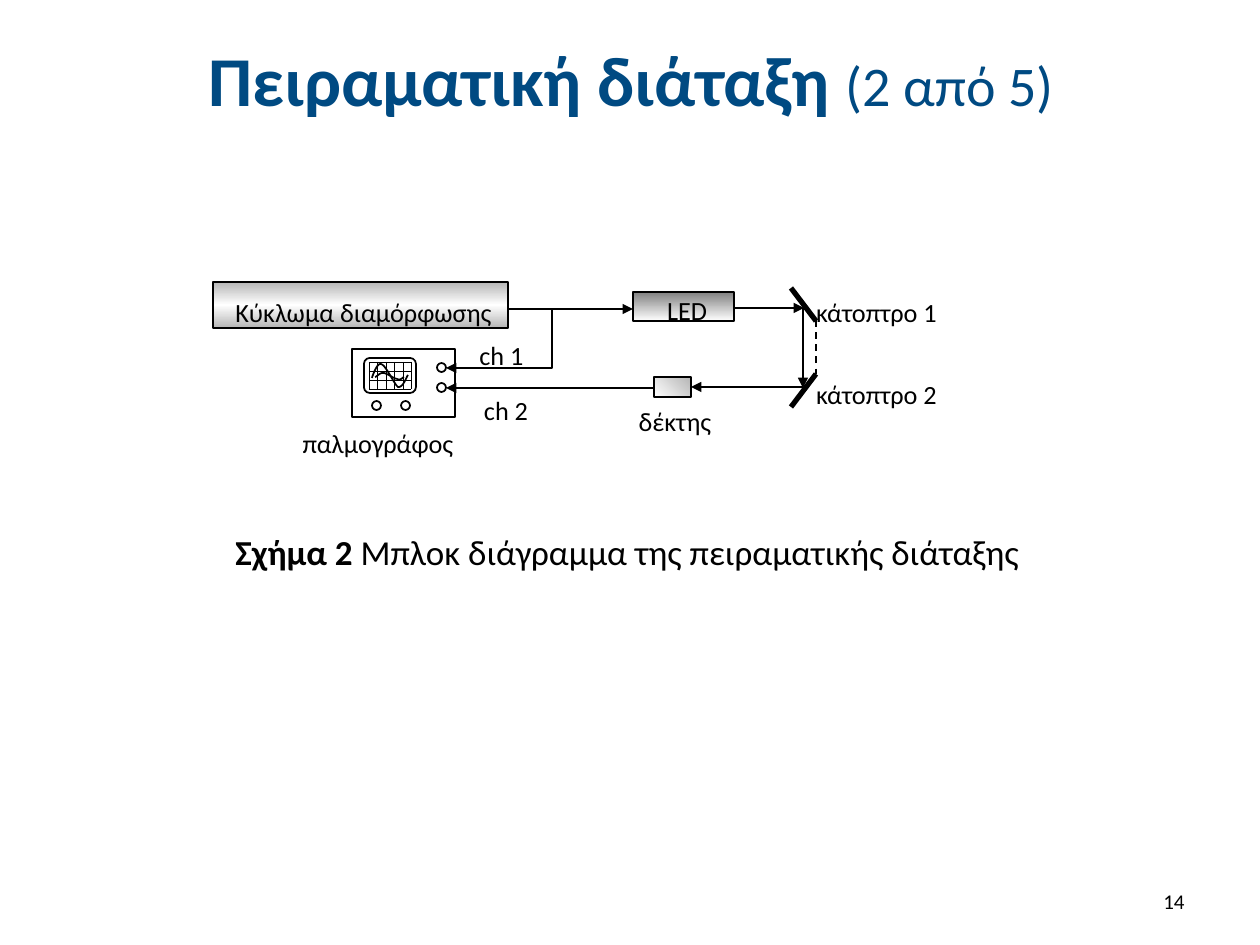
from dataclasses import dataclass

from lxml import etree
from pptx import Presentation
from pptx import util as u
from pptx.dml.color import RGBColor
from pptx.enum import dml, shapes, text
from pptx.oxml.ns import qn

PX = 914400 / 126
BLACK = "000000"
NAVY = "004A82"
SHAPE = shapes.MSO_SHAPE
ALIGN = text.PP_ALIGN
MIDDLE = text.MSO_ANCHOR.MIDDLE


@dataclass
class Run:
    text: str
    size: int = 15
    bold: bool = False
    color: str = BLACK
    font: str = "Calibri"


@dataclass
class Box:
    """A preset shape; stops are (percent, colour) pairs of a gradient."""
    x: int
    y: int
    w: int
    h: int
    kind: SHAPE = SHAPE.RECTANGLE
    stops: tuple = ()
    angle: int = 90


@dataclass
class Wire:
    x1: int
    y1: int
    x2: int
    y2: int
    width: float = 1
    arrow: bool = False
    dashed: bool = False


@dataclass
class Label:
    x: int
    y: int
    w: int
    h: int
    runs: tuple


SCOPE_BODY = Box(352, 349, 103, 68)
BOXES = [
    SCOPE_BODY,
    Box(213, 282, 295, 46, stops=((0, "B6B6B6"), (50, "FFFFFF"), (100, "B6B6B6"))),
    Box(633, 292, 101, 29, stops=((0, "808080"), (100, "FFFFFF"))),
    Box(654, 377, 37, 20, stops=((0, "FFFFFF"), (100, "B6B6B6")), angle=315),
    Box(364, 358, 52, 35, SHAPE.ROUNDED_RECTANGLE),
]
KNOBS = [(401, 401), (372, 401), (437, 363), (437, 383)]
KNOB_SIZE = 9

WIRES = [
    Wire(508, 309, 633, 309, arrow=True),
    Wire(734, 308, 804, 308, arrow=True),
    Wire(803, 308, 803, 388, arrow=True),
    Wire(803, 387, 691, 387, arrow=True),
    Wire(653, 388, 446, 388, arrow=True),
    Wire(791, 288, 816, 321, width=3),
    Wire(791, 407, 816, 374, width=3),
    Wire(816, 320, 816, 374, dashed=True),
]
CHANNEL_1 = [(552, 309), (552, 368), (446, 368)]

# Start point, then two control points and an end point per Bezier segment
WAVES = [
    [(372, 378), (373, 375), (377, 363), (381, 364), (386, 365),
     (394, 384), (398, 387), (403, 388), (406, 378), (408, 375)],
    [(375, 377), (377, 377), (379, 373), (383, 373), (387, 373),
     (394, 379), (397, 379), (401, 381), (403, 377), (404, 377)],
]

LABELS = [
    Label(223, 292, 281, 30, (Run("Κύκλωμα διαμόρφωσης"),)),
    Label(632, 290, 110, 29, (Run("LED"),)),
    Label(620, 401, 110, 29, (Run("δέκτης"),)),
    Label(282, 423, 192, 28, (Run("παλμογράφος"),)),
    Label(814, 292, 125, 28, (Run("κάτοπτρο 1"),)),
    Label(814, 374, 125, 28, (Run("κάτοπτρο 2"),)),
    Label(464, 335, 75, 31, (Run("ch"), Run(" ", 12, font="Arial"), Run("1"))),
    Label(472, 390, 68, 72, (Run("ch 2"),)),
]


def emu(*lengths: float) -> list[int]:
    return [round(v * PX) for v in lengths]


def rgb(color: str) -> RGBColor:
    return RGBColor.from_string(color)


def style_line(line, width: float = 1) -> None:
    line.color.rgb = rgb(BLACK)
    line.width = u.Pt(width)


def add_arrowhead(line) -> None:
    etree.SubElement(line._get_or_add_ln(), qn("a:tailEnd"), type="triangle")


def add_text(slide, at: tuple, runs: tuple, align=ALIGN.LEFT, anchor=text.MSO_ANCHOR.TOP,
             inset: bool = True, spacing: float = 1, after: int = 0) -> None:
    tf = slide.shapes.add_textbox(*emu(*at)).text_frame
    tf.word_wrap = True
    tf.vertical_anchor = anchor
    if not inset:
        tf.margin_left = tf.margin_top = tf.margin_right = tf.margin_bottom = 0
    p = tf.paragraphs[0]
    p.alignment, p.line_spacing, p.space_after = align, spacing, u.Pt(after)
    for run in runs:
        r = p.add_run()
        r.text = run.text
        r.font.name, r.font.size, r.font.bold = run.font, u.Pt(run.size), run.bold
        r.font.color.rgb = rgb(run.color)


def add_box(slide, box: Box) -> None:
    sp = slide.shapes.add_shape(box.kind, *emu(box.x, box.y, box.w, box.h))
    sp.shadow.inherit = False
    style_line(sp.line)
    if not box.stops:
        sp.fill.background()
        return
    sp.fill.gradient()
    sp.fill.gradient_angle = 360 - box.angle
    stop_list = sp._element.spPr.find(".//" + qn("a:gsLst"))
    stop_list.clear()
    for percent, color in box.stops:
        stop = etree.SubElement(stop_list, qn("a:gs"), pos=str(percent * 1000))
        etree.SubElement(stop, qn("a:srgbClr"), val=color)


def add_wire(slide, wire: Wire) -> None:
    ends = emu(wire.x1, wire.y1, wire.x2, wire.y2)
    cxn = slide.shapes.add_connector(shapes.MSO_CONNECTOR.STRAIGHT, *ends)
    style_line(cxn.line, wire.width)
    if wire.dashed:
        cxn.line.dash_style = dml.MSO_LINE.DASH
    if wire.arrow:
        add_arrowhead(cxn.line)
    etree.SubElement(cxn._element.spPr, qn("a:effectLst"))


def add_polyline(slide, points: list, arrow: bool = False) -> None:
    start, *rest = [emu(*point) for point in points]
    builder = slide.shapes.build_freeform(*start)
    builder.add_line_segments(rest, close=False)
    sp = builder.convert_to_shape()
    sp.shadow.inherit = False
    sp.fill.background()
    style_line(sp.line)
    if arrow:
        add_arrowhead(sp.line)


def bezier_points(controls: list, steps: int = 10) -> list:
    """Sample a chain of cubic Bezier segments."""
    points = [controls[0]]
    for i in range(0, len(controls) - 1, 3):
        for t in (k / steps for k in range(1, steps + 1)):
            weights = ((1 - t) ** 3, 3 * t * (1 - t) ** 2, 3 * t * t * (1 - t), t ** 3)
            points.append(tuple(sum(w * c[axis] for w, c in zip(weights, controls[i:i + 4]))
                                for axis in (0, 1)))
    return points


def add_screen_grid(slide, x: int, y: int, w: int, h: int, columns: int, rows: int) -> None:
    for i in range(rows + 1):
        row_y = y + round(h * i / rows)
        add_wire(slide, Wire(x, row_y, x + w, row_y, width=0.25))
    for i in range(columns + 1):
        column_x = x + round(w * i / columns)
        add_wire(slide, Wire(column_x, y, column_x, y + h, width=0.25))


def main() -> None:
    prs = Presentation()
    prs.slide_width, prs.slide_height = emu(1260, 945)
    slide = prs.slides.add_slide(prs.slide_layouts[6])

    add_text(slide, (64, 16, 1134, 125),
             (Run("Πειραματική διάταξη ", 40, True, NAVY), Run("(2 από 5)", 32, color=NAVY)),
             align=ALIGN.CENTER, anchor=MIDDLE)
    add_text(slide, (903, 876, 294, 50), (Run("14", 12),), align=ALIGN.RIGHT, anchor=MIDDLE)

    for box in BOXES + [Box(x, y, KNOB_SIZE, KNOB_SIZE, SHAPE.OVAL) for x, y in KNOBS]:
        add_box(slide, box)
    add_screen_grid(slide, 369, 362, 42, 27, columns=5, rows=3)
    for wave in WAVES:
        add_polyline(slide, bezier_points(wave))
    for wire in WIRES:
        add_wire(slide, wire)
    add_polyline(slide, CHANNEL_1, arrow=True)
    for label in LABELS:
        add_text(slide, (label.x, label.y, label.w, label.h), label.runs,
                 align=ALIGN.CENTER, inset=False, spacing=1.15, after=10)

    add_text(slide, (223, 524, 827, 55),
             (Run("Σχήμα 2", 20, True), Run(" Μπλοκ διάγραμμα της πειραματικής διάταξης", 20)))
    prs.save("out.pptx")


if __name__ == "__main__":
    main()
